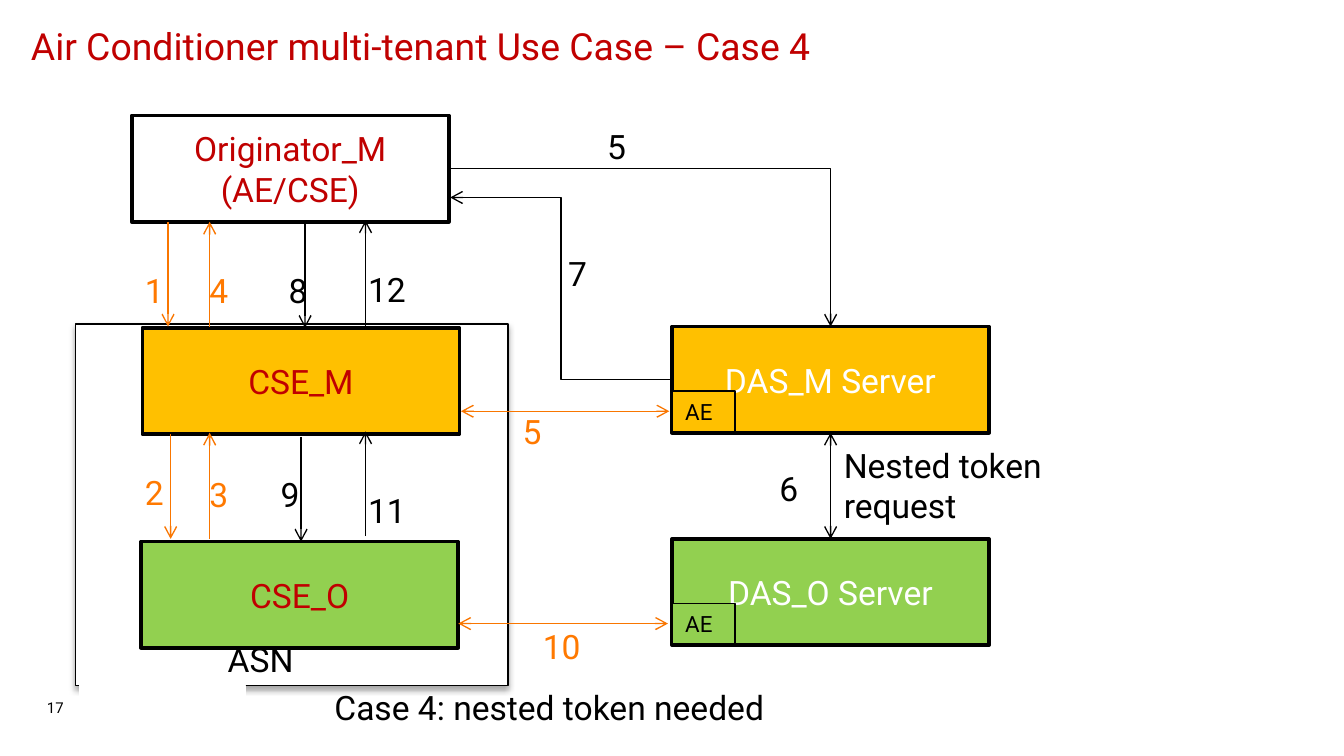
"""Build the nested token slide of the air conditioner use case."""
from lxml.etree import SubElement
from pptx import Presentation
from pptx.dml.color import RGBColor
from pptx.enum.shapes import MSO_CONNECTOR as Link, MSO_SHAPE as Shape
from pptx.enum.text import MSO_ANCHOR as Anchor, MSO_AUTO_SIZE as Fit, PP_ALIGN as Align
from pptx.oxml.ns import qn
from pptx.util import Pt

PX = 9144
FONT = "Roboto"
HEX = {"black": "000000", "white": "FFFFFF", "red": "C00000", "gold": "FFC000",
       "green": "92D050", "orange": "F97600", "amber": "FF7900"}
TITLE = "Air Conditioner multi-tenant Use Case – Case 4"
BIG, TAG = (236, 79), (47, 30)

# name: text, place, size, fill, edge, edge width, font colour
BOXES = {
    "asn": ("ASN", (56, 241), (322, 269), "white", "black", 0.75, "black"),
    "cse_m": ("CSE_M", (106, 244), BIG, "gold", "black", 2, "red"),
    "orig": ("Originator_M (AE/CSE)", (98, 86), BIG, "white", "black", 2, "red"),
    "cse_o": ("CSE_O", (105, 403), BIG, "green", "black", 2, "red"),
    "das_m": ("DAS_M Server", (500, 243), BIG, "gold", "black", 2, "white"),
    "das_o": ("DAS_O Server", (500, 401), BIG, "green", "black", 2, "white"),
    "ae_m": ("AE", (500, 291), TAG, "gold", "black", 0.75, "black"),
    "ae_o": ("AE", (500, 449), TAG, "green", "black", 0.75, "black"),
    "mask": ("", (60, 510), (122, 32), "white", "white", 2, "black"),
}

# start, end, colour, both heads, preset; an end is a point or a (box, side)
LINES = [
    ((125, 165), (125, 243), "orange", False, "line"),
    ((156, 243), (156, 165), "orange", False, "line"),
    ((227, 165), (227, 244), "black", False, "line"),
    ((272, 243), (272, 164), "black", False, "line"),
    ((127, 323), (127, 401), "orange", False, "line"),
    ((156, 401), (156, 322), "orange", False, "line"),
    ((224, 325), (224, 403), "black", False, "line"),
    ((272, 399), (272, 321), "black", False, "line"),
    ((343, 306), (498, 306), "orange", True, "line"),
    ((341, 464), (497, 464), "orange", True, "line"),
    (("das_m", 2), ("das_o", 0), "black", True, "line"),
    (("orig", 3), ("das_m", 0), "black", False, "bentConnector2"),
    (("das_m", 1), (335, 147), "black", False, "bentConnector3"),
]

LABELS = [
    ("1", 98, 196, "amber"), ("4", 146, 196, "amber"), ("8", 205, 196, "black"),
    ("12", 264, 195, "black"), ("2", 98, 346, "amber"), ("3", 146, 348, "amber"),
    ("9", 199, 348, "black"), ("11", 264, 360, "black"), ("5", 442, 89, "black"),
    ("7", 413, 183, "black"), ("5", 379, 301, "amber"), ("6", 570, 343, "black"),
    ("10", 394, 461, "amber"), ("Case 4: nested token needed", 239, 506, "black"),
]
WIDE = {1: 34, 2: 48, 27: 377}


def px(*nums):
    return [n * PX for n in nums]


def rgb(name):
    return RGBColor.from_string(HEX[name])


def write(frame, text, size, hue, align=Align.LEFT):
    frame.text = text
    para = frame.paragraphs[0]
    para.alignment = align
    for run in para.runs:
        run.font.name, run.font.size = FONT, Pt(size)
        run.font.color.rgb = rgb(hue)
    return para


def inset(frame, left, top, right, base):
    frame.margin_left, frame.margin_top, frame.margin_right, frame.margin_bottom = px(
        left, top, right, base)


def add_box(slide, text, spot, size, fill, edge, width, hue):
    box = slide.shapes.add_shape(Shape.RECTANGLE, *px(*spot, *size))
    box.shadow.inherit = False
    box.fill.solid()
    box.fill.fore_color.rgb = rgb(fill)
    box.line.color.rgb, box.line.width = rgb(edge), Pt(width)
    tag = size == TAG
    box.text_frame.vertical_anchor = Anchor.TOP if tag else Anchor.MIDDLE
    if text:
        write(box.text_frame, text, 12 if tag else 18, hue, Align.LEFT if tag else Align.CENTER)
    return box


def add_shade(box):
    effect = box._element.spPr.find(qn("a:effectLst"))
    shade = SubElement(effect, qn("a:outerShdw"), blurRad=str(Pt(3.1)), dist=str(Pt(1.8)),
                       dir="5400000", algn="t", rotWithShape="0")
    tone = SubElement(shade, qn("a:srgbClr"), val=HEX["black"])
    SubElement(tone, qn("a:alpha"), val="35000")


def add_line(slide, boxes, start, end, hue, both, kind):
    def spot(tip):
        return (0, 0) if tip[0] in boxes else px(*tip)

    style = Link.STRAIGHT if kind == "line" else Link.ELBOW
    line = slide.shapes.add_connector(style, *spot(start), *spot(end))
    if start[0] in boxes:
        line.begin_connect(boxes[start[0]], start[1])
    if end[0] in boxes:
        line.end_connect(boxes[end[0]], end[1])
    line.line.color.rgb, line.line.width = rgb(hue), Pt(0.75)
    prop = line._element.spPr
    prop.find(qn("a:prstGeom")).set("prst", kind)
    for tip in ["headEnd", "tailEnd"] if both else ["tailEnd"]:
        SubElement(prop.find(qn("a:ln")), qn("a:" + tip), type="arrow")
    SubElement(prop, qn("a:effectLst"))


def add_text(slide, text, spot, size, hue, wrap, points=18):
    frame = slide.shapes.add_textbox(*px(*spot, *size)).text_frame
    frame.word_wrap = wrap
    frame.auto_size = Fit.SHAPE_TO_FIT_TEXT
    write(frame, text, points, hue)
    return frame


def main():
    deck = Presentation()
    deck.slide_width = 1000 * PX
    deck.slide_height = deck.slide_width * 9 // 16
    slide = deck.slides.add_slide(deck.slide_layouts[5])

    title = slide.shapes.title
    title.left, title.top, title.width, title.height = px(23, 21, 737, 65)
    frame = title.text_frame
    inset(frame, 0, 0, 0, 0)
    frame.vertical_anchor, frame.auto_size = Anchor.TOP, Fit.NONE
    write(frame, TITLE, 20, "red").line_spacing = 0.9

    boxes = {name: add_box(slide, *row) for name, row in BOXES.items()}
    add_shade(boxes["asn"])
    boxes["asn"].text_frame.vertical_anchor = Anchor.BOTTOM
    inset(boxes["asn"].text_frame, 10, 5, 56, 5)

    for row in LINES:
        add_line(slide, boxes, *row)
    for text, left, top, hue in LABELS:
        add_text(slide, text, (left, top), (WIDE[len(text)], 40), hue, False)
    add_text(slide, "Nested token request", (618, 326), (213, 71), "black", True)

    page = add_text(slide, "17", (34, 496), (30, 37), "black", True, 8)
    page.auto_size, page.vertical_anchor = Fit.NONE, Anchor.BOTTOM
    inset(page, 1, 0, 0, 0)
    page.paragraphs[0].line_spacing = 0.85
    page.paragraphs[0].space_after = Pt(12)
    deck.save("out.pptx")


if __name__ == "__main__":
    main()
